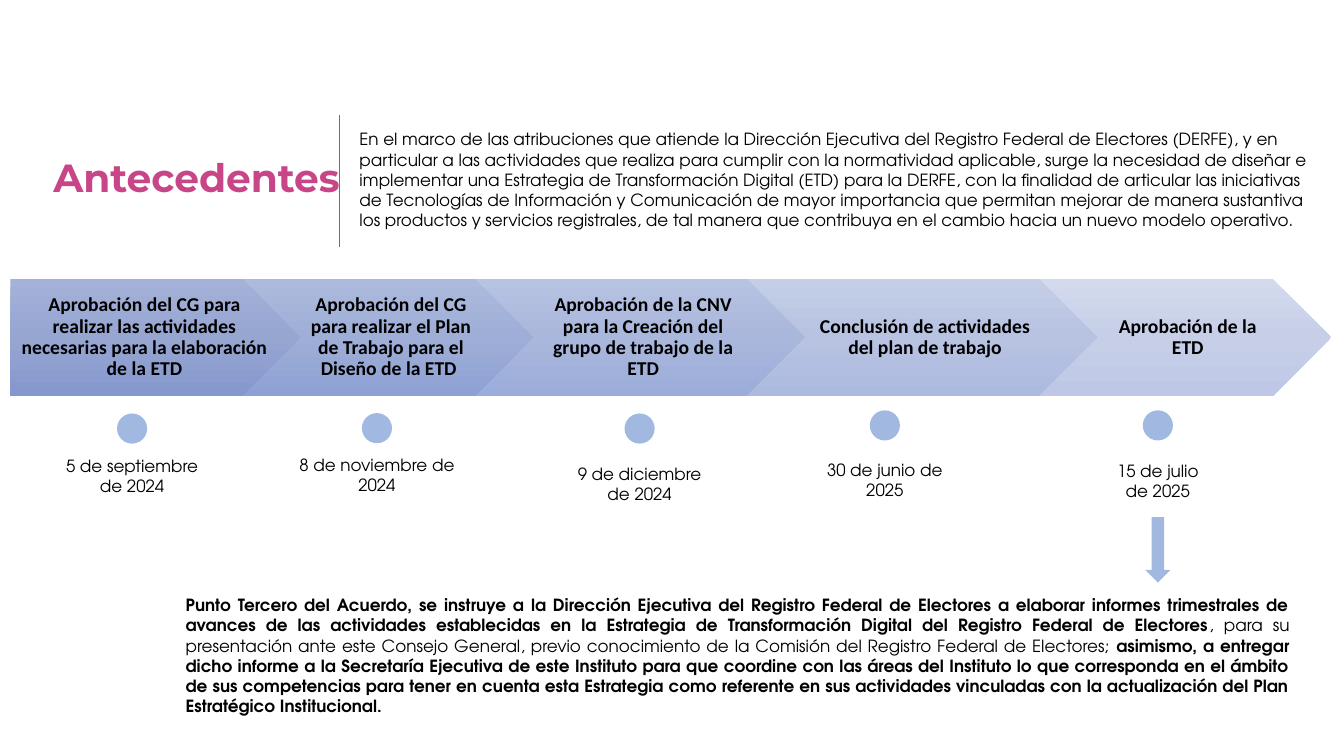
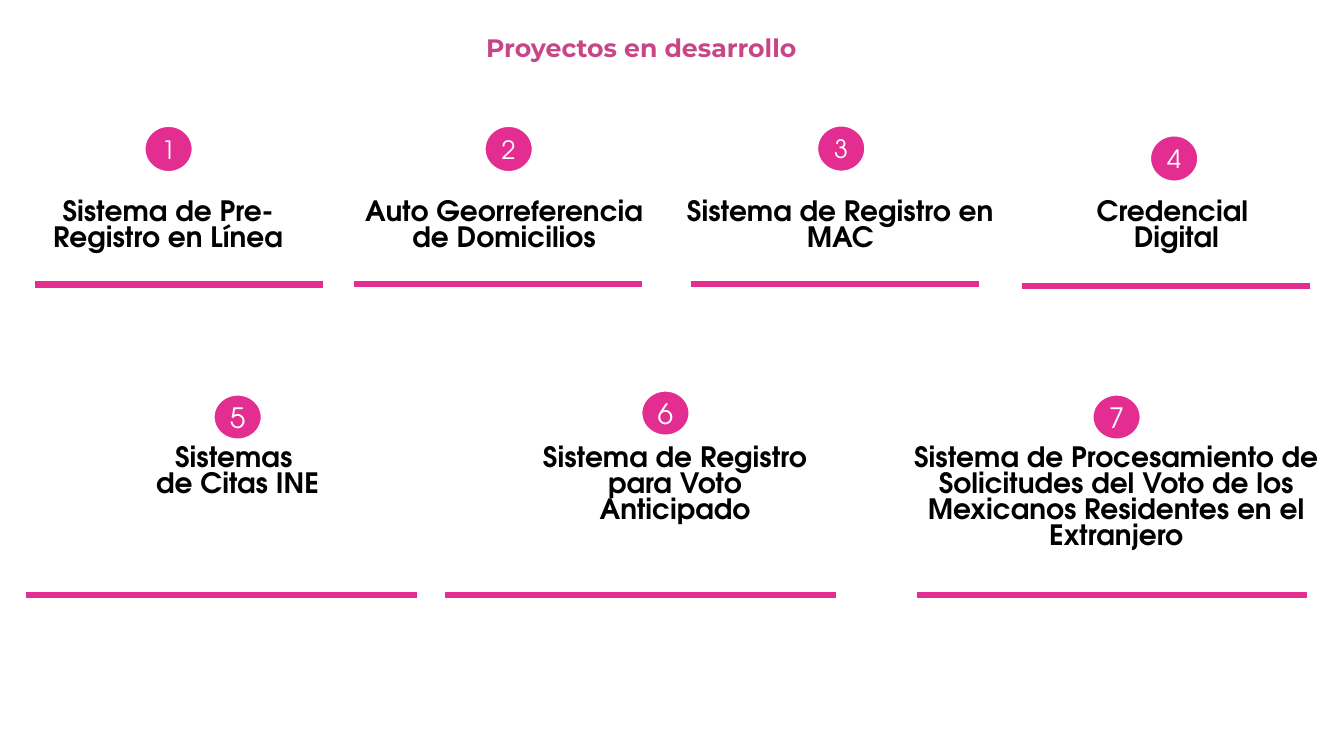
import copy

import lxml.etree
import pptx
import pptx.dml.color
import pptx.enum.shapes
import pptx.enum.text
import pptx.oxml.ns
import pptx.util

Cm = pptx.util.Cm
Pt = pptx.util.Pt
SHAPE = pptx.enum.shapes.MSO_SHAPE
ALIGN = pptx.enum.text.PP_ALIGN
ANCHOR = pptx.enum.text.MSO_ANCHOR
qn = pptx.oxml.ns.qn

BODY_FONT, TITLE_FONT, STEP_FONT = "TeX Gyre Adventor", "Montserrat", "Calibri"
BLACK, WHITE, TITLE_PINK, PINK, BLUE = "000000", "FFFFFF", "C84687", "E32D91", "4472C4"

INTRO = (
    "En el marco de las atribuciones que atiende la Dirección Ejecutiva del Registro Federal de "
    "Electores (DERFE), y en particular a las actividades que realiza para cumplir con la "
    "normatividad aplicable, surge la necesidad de diseñar e implementar una Estrategia de "
    "Transformación Digital (ETD) para la DERFE, con la finalidad de articular las iniciativas de "
    "Tecnologías de Información y Comunicación de mayor importancia que permitan mejorar de manera "
    "sustantiva los productos y servicios registrales, de tal manera que contribuya en el cambio "
    "hacia un nuevo modelo operativo."
)
STEPS = [
    ("Aprobación del CG para realizar las actividades necesarias para la elaboración de la ETD",
     7.34, ("A4B2D9", "97A6D1", "8497CE")),
    ("Aprobación del CG para realizar el Plan de Trabajo para el Diseño de la ETD ",
     7.34, ("ACBADD", "9FAED7", "8DA1D4")),
    ("Aprobación de la CNV para la Creación del grupo de trabajo de la ETD",
     8.31, ("B7C3E2", "AAB7DC", "9BADDA")),
    ("Conclusión de actividades del plan de trabajo",
     8.84, ("C4CEE7", "B8C3E2", "ACBAE0")),
    ("Aprobación de la ETD",
     7.34, ("D3DAED", "C7CFE8", "BEC8E6")),
]
DATES = [
    ("5 de septiembre de 2024", 3.33, 10.42, 11.35, 4.14),
    ("8 de noviembre de 2024", 9.5, 10.41, 11.33, 4.57),
    ("9 de diciembre de 2024", 16.12, 10.42, 11.56, 4.14),
    ("30 de junio de 2025", 22.3, 10.34, 11.46, 3.53),
    ("15 de julio de 2025", 29.18, 10.34, 11.49, 2.95),
]
AGREEMENT = [
    ("Punto Tercero del Acuerdo, se instruye a la Dirección Ejecutiva del Registro Federal de "
     "Electores a elaborar informes trimestrales de avances de las actividades establecidas en la "
     "Estrategia de Transformación Digital del Registro Federal de Electores", True),
    (", para su presentación ante este Consejo General, previo conocimiento de la Comisión del "
     "Registro Federal de Electores; ", False),
    ("asimismo, a entregar dicho informe a la Secretaría Ejecutiva de este Instituto para que "
     "coordine con las áreas del Instituto lo que corresponda en el ámbito de sus competencias "
     "para tener en cuenta esta Estrategia como referente en sus actividades vinculadas con la "
     "actualización del Plan Estratégico Institucional.", True),
]
PROJECT_ROWS = [
    {"left": 0, "top": 4.93, "column": 8.47, "height": 3.43,
     "badge_height": 1.27, "badge_size": 18, "rule_length": 7.25,
     "projects": [
         (["Sistema de Pre-Registro en Línea"], (3.59, 3.12), (0.89, 7.17)),
         (["Auto Georreferencia de Domicilios"], (12.16, 3.12), (8.92, 7.15)),
         (["Sistema de Registro en MAC"], (20.54, 3.11), (17.42, 7.15)),
         (["Credencial ", "Digital"], (28.93, 3.36), (25.76, 7.21)),
     ]},
    {"left": 0.33, "top": 11.13, "column": 11.12, "height": 4.93,
     "badge_height": 1.24, "badge_size": 20, "rule_length": 9.84,
     "projects": [
         (["Sistemas", " de Citas INE"], (5.33, 9.89), (0.66, 14.99)),
         (["Sistema de Registro", " para Voto ", "Anticipado"], (16.11, 9.79), (11.22, 14.99)),
         (["Sistema de Procesamiento de Solicitudes del Voto de los Mexicanos Residentes en el "
           "Extranjero"], (27.48, 9.89), (23.1, 14.99)),
     ]},
]


def color(value):
    return pptx.dml.color.RGBColor.from_string(value)


def write(frame, paragraphs, size, font=BODY_FONT, ink=BLACK, align=ALIGN.LEFT, spacing=None):
    for index, runs in enumerate(paragraphs):
        paragraph = frame.paragraphs[0] if index == 0 else frame.add_paragraph()
        paragraph.alignment = align
        if spacing:
            paragraph.line_spacing = spacing
        for text, bold in runs:
            run = paragraph.add_run()
            run.text = text
            run.font.name = font
            run.font.size = Pt(size)
            run.font.bold = bold
            run.font.color.rgb = color(ink)


def add_text(slide, left, top, width, height, runs, size, anchor=ANCHOR.TOP, **style):
    frame = slide.shapes.add_textbox(Cm(left), Cm(top), Cm(width), Cm(height)).text_frame
    frame.word_wrap = True
    frame.vertical_anchor = anchor
    write(frame, [runs], size, **style)


def add_title(slide, box, text, size, **style):
    add_text(slide, *box, [(text, True)], size, font=TITLE_FONT, ink=TITLE_PINK, **style)


def add_plain_shape(slide, preset, left, top, width, height, fill=None, opacity=None):
    shape = slide.shapes.add_shape(preset, Cm(left), Cm(top), Cm(width), Cm(height))
    shape.shadow.inherit = False
    shape.line.fill.background()
    if fill:
        shape.fill.solid()
        shape.fill.fore_color.rgb = color(fill)
    if opacity:
        tone = shape._element.spPr.find(".//" + qn("a:srgbClr"))
        lxml.etree.SubElement(tone, qn("a:alpha")).set("val", str(opacity * 1000))
    return shape


def add_rule(slide, start, end, ink, weight):
    ends = [Cm(value) for value in (*start, *end)]
    rule = slide.shapes.add_connector(pptx.enum.shapes.MSO_CONNECTOR.STRAIGHT, *ends)
    rule.line.color.rgb = color(ink)
    rule.line.width = Pt(weight)
    lxml.etree.SubElement(rule._element.spPr, qn("a:effectLst"))


def add_step(slide, preset, left, width, text, tones):
    step = add_plain_shape(slide, preset, left, 7.03, width, 2.94)
    step.fill.gradient()
    step.fill.gradient_angle = 270
    stops = step._element.spPr.find(".//" + qn("a:gsLst"))
    stops.insert(1, copy.deepcopy(stops[0]))
    for stop, tone, position in zip(step.fill.gradient_stops, tones, (0, 0.5, 1)):
        stop.color.rgb = color(tone)
        stop.position = position
    frame = step.text_frame
    frame.word_wrap = True
    frame.vertical_anchor = ANCHOR.MIDDLE
    frame.margin_left = Cm(0.21 if preset == SHAPE.PENTAGON else 0.16)
    frame.margin_right = Cm(0.05)
    frame.margin_top = frame.margin_bottom = Cm(0.1)
    write(frame, [[(text, True)]], 14, font=STEP_FONT, align=ALIGN.CENTER, spacing=0.9)


def build_background(slide):
    add_title(slide, (0.05, 3.56, 8.76, 1.63), "Antecedentes", 28,
              anchor=ANCHOR.BOTTOM, align=ALIGN.RIGHT, spacing=0.9)
    add_rule(slide, (8.56, 2.9), (8.56, 6.22), BLUE, 0.5)
    add_text(slide, 8.81, 3.13, 24.74, 2.82, [(INTRO, False)], 12)

    left, overlap = 0.26, 1.47
    for index, (text, width, tones) in enumerate(STEPS):
        preset = SHAPE.CHEVRON if index else SHAPE.PENTAGON
        add_step(slide, preset, left, width, text, tones)
        left += width - overlap

    dot = 0.76
    for text, center, dot_top, text_top, width in DATES:
        add_plain_shape(slide, SHAPE.OVAL, center - dot / 2, dot_top, dot, dot, BLUE, 50)
        add_text(slide, center - width / 2, text_top, width, 1.27, [(text, False)], 12,
                 align=ALIGN.CENTER)

    arrow = 0.64
    add_plain_shape(slide, SHAPE.DOWN_ARROW, DATES[-1][1] - arrow / 2, 13.03, arrow, 1.65, BLUE, 50)
    add_text(slide, 4.43, 14.87, 28.32, 3.33, AGREEMENT, 12, align=ALIGN.JUSTIFY)


def add_project_table(slide, row):
    projects = row["projects"]
    table = slide.shapes.add_table(
        1, len(projects), Cm(row["left"]), Cm(row["top"]),
        Cm(row["column"] * len(projects)), Cm(row["height"])).table
    table.first_row = table.horz_banding = False
    for cell, (lines, _, _) in zip(table.rows[0].cells, projects):
        cell.fill.background()
        write(cell.text_frame, [[(line, True)] for line in lines], 20, align=ALIGN.CENTER)


def add_badge(slide, left, top, height, number, size):
    badge = add_plain_shape(slide, SHAPE.OVAL, left, top, 1.32, height, PINK)
    badge.line.color.rgb = color(WHITE)
    badge.line.width = Pt(4.5)
    badge.text_frame.vertical_anchor = ANCHOR.MIDDLE
    write(badge.text_frame, [[(str(number), False)]], size, ink=WHITE, align=ALIGN.CENTER)


def build_projects(slide):
    add_title(slide, (12, 0.7, 8.69, 1.02), "Proyectos en desarrollo", 18)
    number = 0
    for row in PROJECT_ROWS:
        add_project_table(slide, row)
        for _, badge_at, (rule_left, rule_top) in row["projects"]:
            number += 1
            add_badge(slide, *badge_at, row["badge_height"], number, row["badge_size"])
            add_rule(slide, (rule_left, rule_top),
                     (rule_left + row["rule_length"], rule_top), PINK, 4.5)


def main():
    deck = pptx.Presentation()
    deck.slide_width, deck.slide_height = Cm(33.87), Cm(19.05)
    for build in (build_background, build_projects):
        build(deck.slides.add_slide(deck.slide_layouts[6]))
    deck.save("out.pptx")


if __name__ == "__main__":
    main()
